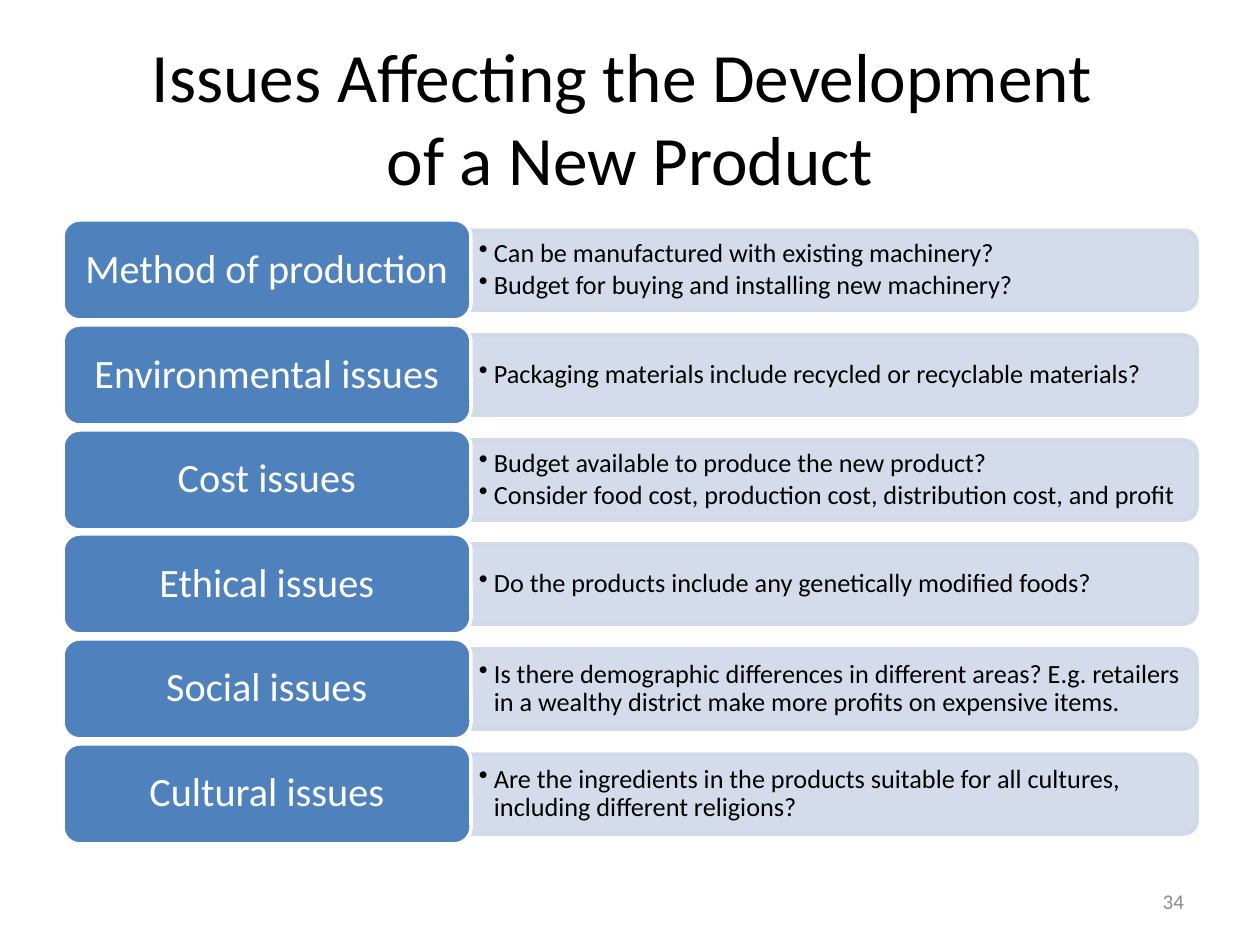
from lxml import etree
from pptx import Presentation
from pptx.dml.color import RGBColor
from pptx.enum.shapes import MSO_SHAPE as Shape
from pptx.enum.text import MSO_ANCHOR as Anchor, MSO_AUTO_SIZE as AutoSize, PP_ALIGN as Align
from pptx.oxml.ns import qn
from pptx.util import Pt

PX = 914400 / 126
BLACK = RGBColor(0x00, 0x00, 0x00)
WHITE = RGBColor(0xFF, 0xFF, 0xFF)
BLUE = RGBColor(0x4F, 0x81, 0xBD)
PALE_BLUE = RGBColor(0xD0, 0xD8, 0xE8)
GRAY = RGBColor(0x8C, 0x8C, 0x8C)

ISSUES = [
    ("Method of production", ["Can be manufactured with existing machinery?",
                              "Budget for buying and installing new machinery?"]),
    ("Environmental issues", ["Packaging materials include recycled or recyclable materials?"]),
    ("Cost issues", ["Budget available to produce the new product?",
                     "Consider food cost, production cost, distribution cost, and profit"]),
    ("Ethical issues", ["Do the products include any genetically modified foods?"]),
    ("Social issues", ["Is there demographic differences in different areas? E.g. retailers "
                       "in a wealthy district make more profits on expensive items."]),
    ("Cultural issues", ["Are the ingredients in the products suitable for all cultures, "
                         "including different religions?"]),
]


def px(*lengths):
    return [round(length * PX) for length in lengths]


def format_text(frame, size, color, align, margins=(13, 6)):
    frame.word_wrap = True
    frame.auto_size = AutoSize.NONE
    frame.vertical_anchor = Anchor.MIDDLE
    frame.margin_left, frame.margin_top = px(*margins)
    frame.margin_right, frame.margin_bottom = px(*margins)
    for para in frame.paragraphs:
        para.alignment = align
        para.font.name = "Calibri"
        para.font.size = Pt(size)
        para.font.color.rgb = color


deck = Presentation()
deck.slide_width, deck.slide_height = px(1260, 945)
page = deck.slides.add_slide(deck.slide_layouts[5])

# Title
title = page.shapes.title
title.left, title.top, title.width, title.height = px(63, 38, 1134, 157)
title.text_frame.text = "Issues Affecting the Development \vof a New Product"
format_text(title.text_frame, 39.6, BLACK, Align.CENTER)

# One row per issue: pale panel, its questions, blue label
ROW_TOP, ROW_PITCH = 220, 104.8
LABEL_LEFT, LABEL_WIDTH, LABEL_HEIGHT = 63, 408, 100
PANEL_LEFT, PANEL_WIDTH, PANEL_HEIGHT = LABEL_LEFT + LABEL_WIDTH, 726, 80

for row, (issue, questions) in enumerate(ISSUES):
    top = round(ROW_TOP + row * ROW_PITCH)
    middle = top + LABEL_HEIGHT // 2

    # The panel is a tall shape turned a quarter, so its round corners face right
    center = PANEL_LEFT + PANEL_WIDTH // 2
    panel = page.shapes.add_shape(
        Shape.ROUND_2_SAME_RECTANGLE,
        *px(center - PANEL_HEIGHT // 2, middle - PANEL_WIDTH // 2, PANEL_HEIGHT, PANEL_WIDTH))
    panel.rotation = 90
    panel.shadow.inherit = False
    panel.fill.solid()
    panel.fill.fore_color.rgb = PALE_BLUE
    panel.line.color.rgb = PALE_BLUE
    panel.line.width = Pt(2)
    for color in panel.element.spPr.iter(qn("a:srgbClr")):
        etree.SubElement(color, qn("a:alpha"), val="90000")

    box = page.shapes.add_textbox(*px(PANEL_LEFT, middle - 36, 722, 72))
    box.text_frame.text = "\n".join(questions)
    for para in box.text_frame.paragraphs:
        properties = para._p.get_or_add_pPr()
        indent = px(15)[0]
        properties.set("marL", str(indent))
        properties.set("indent", str(-indent))
        etree.SubElement(properties, qn("a:buChar"), char="•")
        para.line_spacing = 0.9
        para.space_after = Pt(2)
    format_text(box.text_frame, 15, BLACK, Align.LEFT, (8, 4))

    label = page.shapes.add_shape(
        Shape.ROUNDED_RECTANGLE, *px(LABEL_LEFT, top, LABEL_WIDTH, LABEL_HEIGHT))
    label.shadow.inherit = False
    label.fill.solid()
    label.fill.fore_color.rgb = BLUE
    label.line.color.rgb = WHITE
    label.line.width = Pt(2)
    label.text_frame.text = issue
    label.text_frame.paragraphs[0].line_spacing = 0.9
    format_text(label.text_frame, 23, WHITE, Align.CENTER, (17, 11))

# Page number
number = page.shapes.add_textbox(*px(903, 876, 294, 50))
number.text_frame.text = "34"
format_text(number.text_frame, 12, GRAY, Align.RIGHT)

deck.save("out.pptx")
